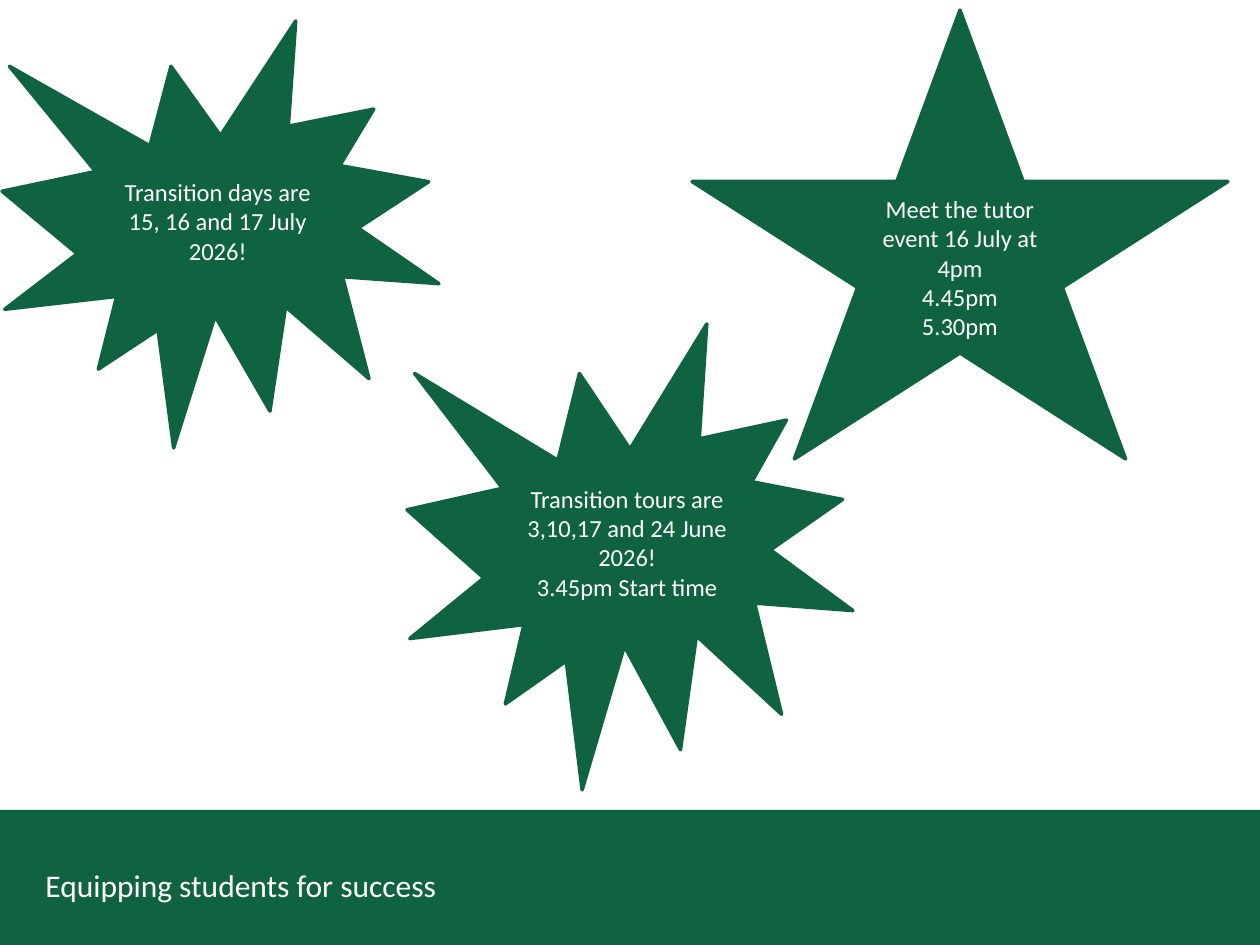
from dataclasses import dataclass

from pptx import Presentation
from pptx.dml.color import RGBColor
from pptx.enum.shapes import MSO_SHAPE
from pptx.enum.text import MSO_ANCHOR, MSO_AUTO_SIZE, PP_ALIGN
from pptx.util import Pt

BURST, STAR, BAND = MSO_SHAPE.EXPLOSION1, MSO_SHAPE.STAR_5_POINT, MSO_SHAPE.RECTANGLE
LEFT, CENTER = PP_ALIGN.LEFT, PP_ALIGN.CENTER
MIDDLE, TOP = MSO_ANCHOR.MIDDLE, MSO_ANCHOR.TOP
GROW = MSO_AUTO_SIZE.SHAPE_TO_FIT_TEXT
PX = 914400 // 126


@dataclass(frozen=True)
class Theme:
    green: RGBColor = RGBColor(0x0F, 0x63, 0x40)
    white: RGBColor = RGBColor(0xFF, 0xFF, 0xFF)
    font: str = "Calibri"
    callout: int = 14
    motto: int = 18
    outline: int = 2


theme = Theme()


def write(box, lines, size, align=LEFT, anchor=TOP):
    frame = box.text_frame
    frame.word_wrap = True
    frame.vertical_anchor = anchor
    for index, line in enumerate(lines):
        para = frame.paragraphs[0] if index == 0 else frame.add_paragraph()
        para.alignment = align
        span = para.add_run()
        span.text = line
        span.font.name = theme.font
        span.font.size = Pt(size)
        span.font.color.rgb = theme.white


def add_green(page, kind, bounds):
    shape = page.shapes.add_shape(kind, *(value * PX for value in bounds))
    shape.shadow.inherit = False
    shape.fill.solid()
    shape.fill.fore_color.rgb = theme.green
    shape.line.fill.background()
    return shape


deck = Presentation()
deck.slide_width = 1260 * PX
deck.slide_height = 945 * PX
page = deck.slides.add_slide(deck.slide_layouts[6])
page.background.fill.solid()
page.background.fill.fore_color.rgb = theme.white

add_green(page, BAND, (0, 810, 1260, 139))

callouts = [
    (BURST, (2, 21, 437, 427), ["Transition days are 15, 16 and 17 July 2026!"]),
    (BURST, (407, 324, 446, 466),
     ["Transition tours are 3,10,17 and 24 June 2026!", "3.45pm Start time"]),
    (STAR, (692, 10, 536, 449),
     ["Meet the tutor event 16 July at", "4pm", "4.45pm", "5.30pm"]),
]
for kind, bounds, lines in callouts:
    callout = add_green(page, kind, bounds)
    callout.line.color.rgb = theme.green
    callout.line.width = Pt(theme.outline)
    write(callout, lines, theme.callout, CENTER, MIDDLE)

motto = page.shapes.add_textbox(*(value * PX for value in (33, 860, 725, 51)))
write(motto, ["Equipping students for success"], theme.motto)
motto.text_frame.auto_size = GROW

deck.save("out.pptx")
